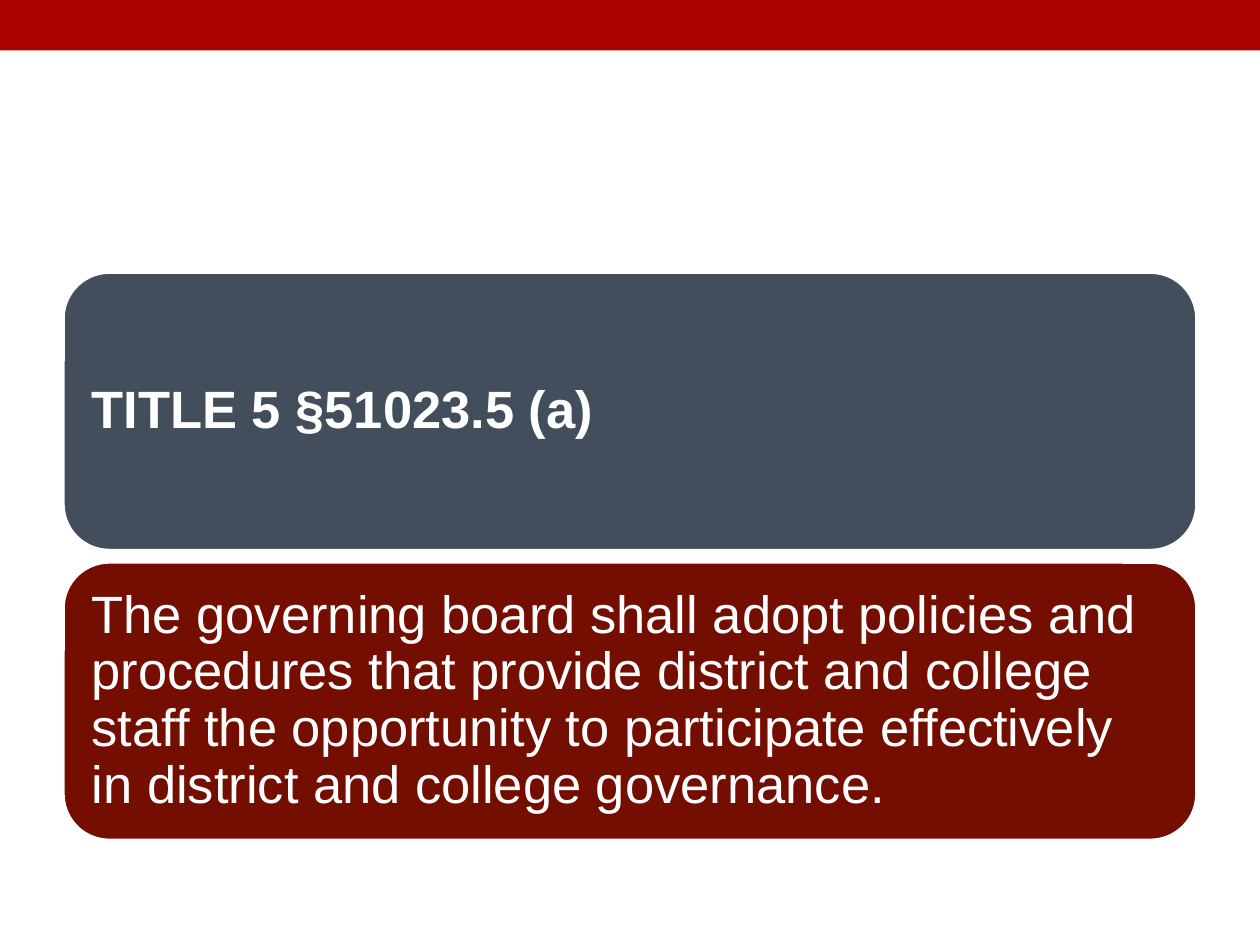
from dataclasses import dataclass

from pptx import Presentation
from pptx.dml.color import RGBColor
from pptx.enum import shapes, text
from pptx.util import Inches, Pt

PANELS = [
    {"text": "TITLE 5 §51023.5 (a)", "fill": "424E5B", "bold": True},
    {
        "text": "The governing board shall adopt policies and procedures that "
                "provide district and college staff the opportunity to participate "
                "effectively in district and college governance.",
        "fill": "730E00",
        "bold": False,
    },
]


@dataclass(frozen=True)
class Theme:
    font: str = "Arial"
    size: int = 30
    banner: str = "AD0101"
    light: str = "FFFFFF"
    outline: float = 2.08


THEME = Theme()
SLIDE_WIDTH, SLIDE_HEIGHT = 10, 7.5
BANNER_HEIGHT = 0.4
MARGIN, PANEL_TOP = 0.5, 2.16
PANEL_HEIGHT, PANEL_GAP = 2.21, 0.09
INSET = 0.12


def add_block(slide, kind, left, top, width, height, fill):
    shape = slide.shapes.add_shape(
        kind, Inches(left), Inches(top), Inches(width), Inches(height))
    shape.shadow.inherit = False
    shape.fill.solid()
    shape.fill.fore_color.rgb = RGBColor.from_string(fill)
    shape.line.fill.background()
    return shape


def add_panel(slide, panel, top):
    shape = add_block(slide, shapes.MSO_SHAPE.ROUNDED_RECTANGLE, MARGIN, top,
                      SLIDE_WIDTH - 2 * MARGIN, PANEL_HEIGHT, panel["fill"])
    shape.line.color.rgb = RGBColor.from_string(THEME.light)
    shape.line.width = Pt(THEME.outline)
    frame = shape.text_frame
    frame.word_wrap = True
    frame.vertical_anchor = text.MSO_ANCHOR.MIDDLE
    frame.margin_left = frame.margin_right = Inches(INSET)
    frame.margin_top = frame.margin_bottom = Inches(INSET)
    paragraph = frame.paragraphs[0]
    paragraph.alignment = text.PP_ALIGN.LEFT
    paragraph.line_spacing = 0.9
    run = paragraph.add_run()
    run.text = panel["text"]
    run.font.name = THEME.font
    run.font.size = Pt(THEME.size)
    run.font.bold = panel["bold"]
    run.font.color.rgb = RGBColor.from_string(THEME.light)


def main():
    presentation = Presentation()
    presentation.slide_width = Inches(SLIDE_WIDTH)
    presentation.slide_height = Inches(SLIDE_HEIGHT)
    slide = presentation.slides.add_slide(presentation.slide_layouts[6])
    add_block(slide, shapes.MSO_SHAPE.RECTANGLE, 0, 0,
              SLIDE_WIDTH, BANNER_HEIGHT, THEME.banner)
    for index, panel in enumerate(PANELS):
        add_panel(slide, panel, PANEL_TOP + index * (PANEL_HEIGHT + PANEL_GAP))
    presentation.save("out.pptx")


if __name__ == "__main__":
    main()
